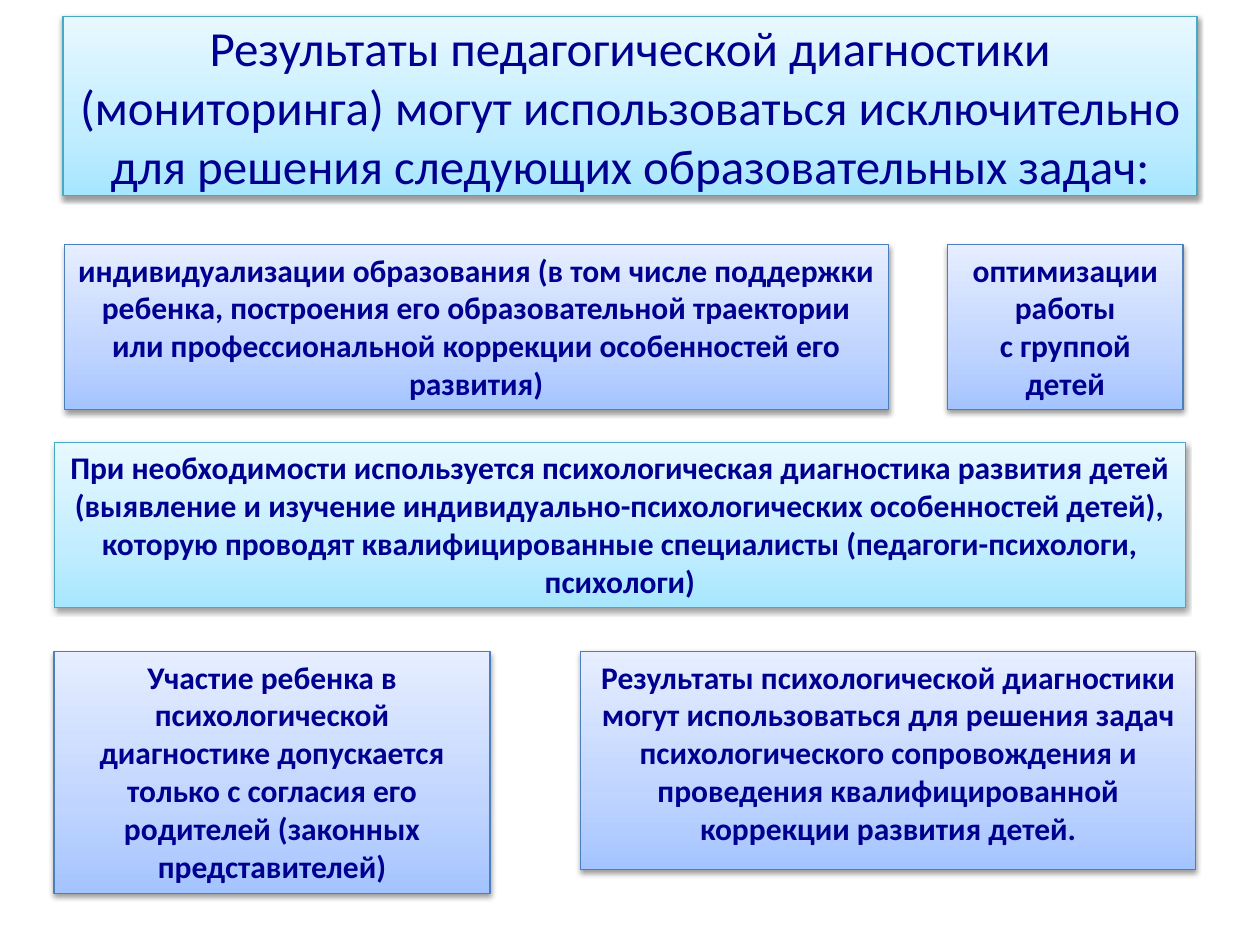
from copy import deepcopy
from lxml import etree
from pptx import Presentation
from pptx.dml.color import RGBColor
from pptx.enum import text
from pptx.oxml import ns
from pptx.util import Inches, Pt


def rgb(value):
    return RGBColor.from_string(value)


def format_panel(sp, palette, size, bold, anchor, auto_size):
    line, stops = palette
    sp.fill.gradient()
    sp.fill.gradient_angle = 90
    gs_list = sp.fill.gradient_stops[0]._gs.getparent()
    gs_list.insert(1, deepcopy(gs_list[0]))
    for stop, (position, color) in zip(sp.fill.gradient_stops, stops):
        stop.position = position
        stop.color.rgb = rgb(color)
    sp.line.color.rgb = rgb(line)
    sp.line.width = Pt(0.75)

    sp.shadow.inherit = False
    effects = sp._element.spPr.find(ns.qn("a:effectLst"))
    shadow = etree.SubElement(effects, ns.qn("a:outerShdw"), blurRad="40000",
                              dist="20000", dir="5400000", rotWithShape="0")
    color = etree.SubElement(shadow, ns.qn("a:srgbClr"), val="000000")
    etree.SubElement(color, ns.qn("a:alpha"), val="38000")

    tf = sp.text_frame
    tf.word_wrap = True
    tf.auto_size = auto_size
    tf.vertical_anchor = anchor
    for p in tf.paragraphs:
        p.alignment = text.PP_ALIGN.CENTER
        for r in p.runs:
            r.font.name = "Calibri"
            r.font.size = Pt(size)
            r.font.bold = bold
            r.font.color.rgb = rgb("000090")


CYAN = ("46AAC5", [(0, "A7E6FF"), (0.35, "C1EDFF"), (1, "E7F8FF")])
BLUE = ("4B7EBC", [(0, "A4C4FF"), (0.35, "BFD4FF"), (1, "E6EEFF")])
GROW = text.MSO_AUTO_SIZE.SHAPE_TO_FIT_TEXT
FIXED = text.MSO_AUTO_SIZE.NONE

prs = Presentation()
prs.slide_width = Inches(10)
prs.slide_height = Inches(7.5)
s = prs.slides.add_slide(prs.slide_layouts[5])

title = s.shapes.title
title.left, title.top = Inches(0.5), Inches(0.13)
title.width, title.height = Inches(9), Inches(1.42)
title.text_frame.text = (
    "Результаты педагогической диагностики (мониторинга) могут использоваться "
    "исключительно для решения следующих образовательных задач:")
format_panel(title, CYAN, 28, False, text.MSO_ANCHOR.MIDDLE, FIXED)

panels = [
    (0.51, 1.94, 6.54, 1.31, BLUE, GROW,
     "индивидуализации образования (в том числе поддержки ребенка, построения "
     "его образовательной траектории или профессиональной коррекции "
     "особенностей его развития)"),
    (7.52, 1.94, 1.87, 1.31, BLUE, GROW,
     "оптимизации\nработы\nс группой детей"),
    (0.43, 3.51, 8.98, 1.31, CYAN, GROW,
     "При необходимости используется психологическая диагностика развития "
     "детей (выявление и изучение индивидуально-психологических особенностей "
     "детей), которую проводят квалифицированные специалисты "
     "(педагоги-психологи, психологи)"),
    (0.43, 5.17, 3.46, 1.92, BLUE, GROW,
     "Участие ребенка в психологической диагностике допускается только с "
     "согласия его родителей (законных представителей)"),
    (4.61, 5.17, 4.88, 1.73, BLUE, FIXED,
     "Результаты психологической диагностики могут использоваться для решения "
     "задач психологического сопровождения и проведения квалифицированной "
     "коррекции развития детей."),
]
for left, top, width, height, palette, auto_size, wording in panels:
    sp = s.shapes.add_textbox(Inches(left), Inches(top), Inches(width), Inches(height))
    sp.text_frame.text = wording
    format_panel(sp, palette, 18, True, text.MSO_ANCHOR.TOP, auto_size)

prs.save("out.pptx")
